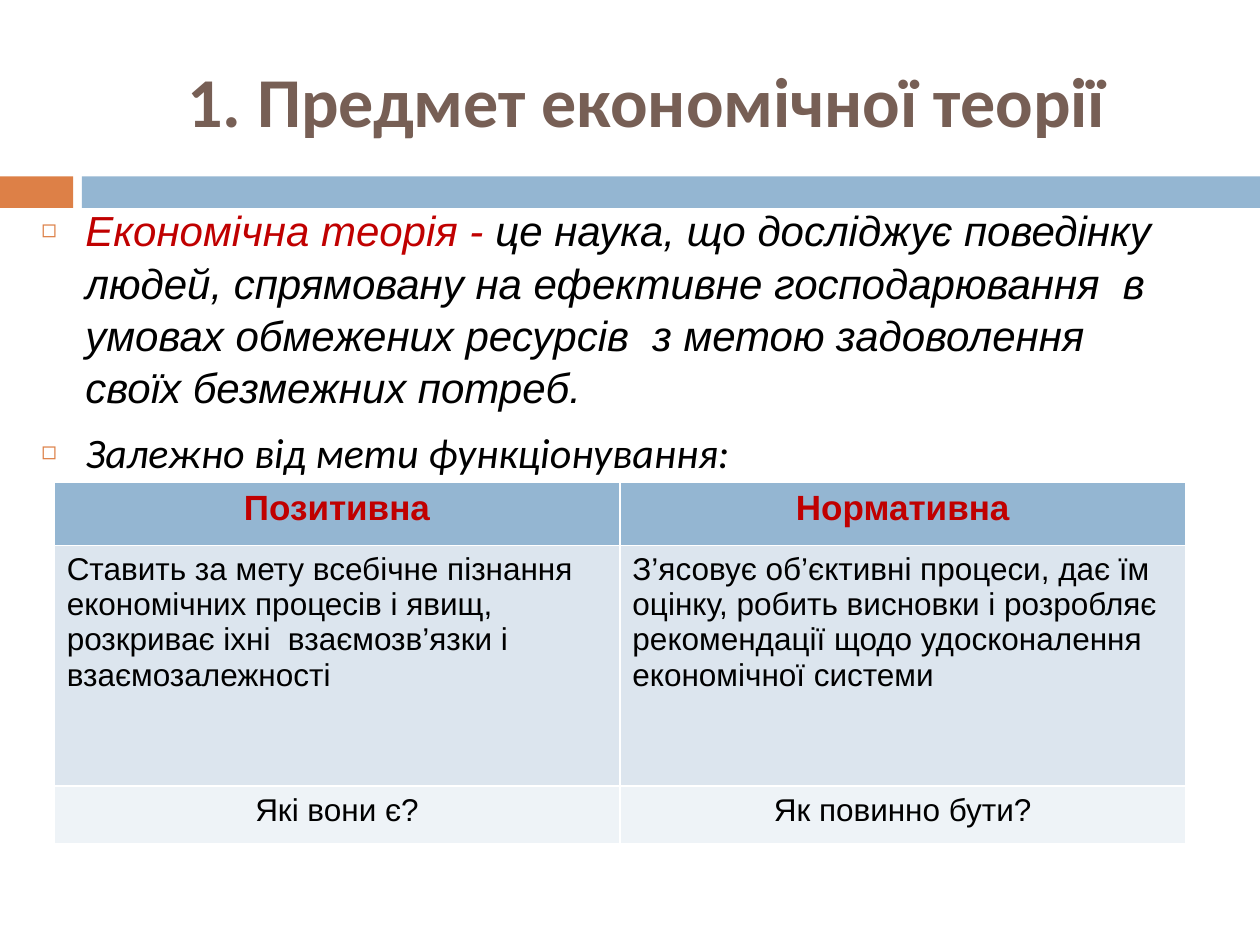
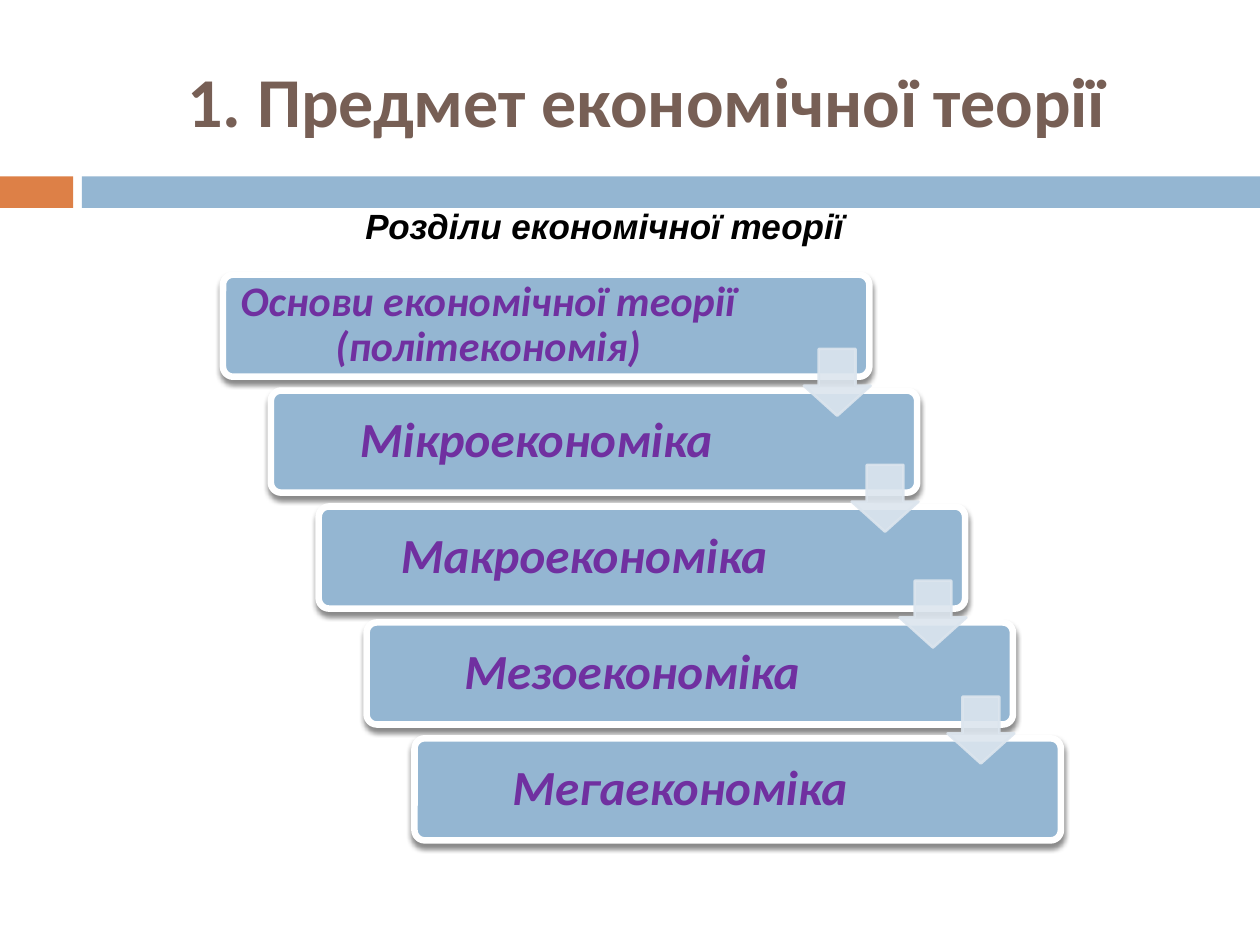
from lxml import etree
from pptx import Presentation
from pptx.dml.color import RGBColor
from pptx.enum.shapes import MSO_SHAPE
from pptx.enum.text import MSO_ANCHOR, MSO_AUTO_SIZE, PP_ALIGN
from pptx.oxml.ns import qn
from pptx.util import Inches, Pt

RECTANGLE = MSO_SHAPE.RECTANGLE
ROUNDED = MSO_SHAPE.ROUNDED_RECTANGLE
DOWN_ARROW = MSO_SHAPE.DOWN_ARROW
LEFT, CENTER = PP_ALIGN.LEFT, PP_ALIGN.CENTER
TOP, MIDDLE = MSO_ANCHOR.TOP, MSO_ANCHOR.MIDDLE
NO_AUTOFIT = MSO_AUTO_SIZE.NONE

COLORS = {
    "orange": "DD8047", "blue": "94B6D2", "pale": "DCE5EE", "paler": "EEF3F7",
    "brown": "775F55", "red": "C00000", "purple": "7030A0",
    "black": "000000", "white": "FFFFFF",
}
TITLE = "1. Предмет економічної теорії"
TITLE_BOX = (0.67, 0.25, 8.92, 1.08)
BODY_BOX = (0.23, 1.56, 9.14, 5.34)
TABLE_BOX = (0.43, 3.83, 8.98, 2.87)
CASCADE_BOX = (1.77, 2.18, 6.65, 4.49)
BANDS = [(0, 0.58, "orange"), (0.65, 9.35, "blue")]

DEFINITION = [
    [("Економічна теорія - ", {"color": "red"}),
     ("це наука, що досліджує поведінку людей, спрямовану на ефективне "
      "господарювання  в умовах обмежених ресурсів  з метою задоволення "
      "своїх безмежних потреб.", {})],
    [("Залежно від мети функціонування:", {"font": "Calibri"})],
]
TABLE_ROWS = [
    (0.5, "blue", CENTER, {"size": 20, "color": "red", "bold": True},
     ("Позитивна", "Нормативна")),
    (1.91, "pale", LEFT, {"size": 18},
     ("Ставить за мету всебічне пізнання економічних процесів і явищ, "
      "розкриває іхні  взаємозв’язки і взаємозалежності",
      "З’ясовує об’єктивні процеси, дає їм оцінку, робить висновки і "
      "розробляє рекомендації щодо удосконалення економічної системи")),
    (0.46, "paler", CENTER, {"size": 18}, ("Які вони є?", "Як повинно бути?")),
]
SECTIONS = [
    ("Основи економічної теорії (політекономія)", 24),
    ("Мікроекономіка", 28),
    ("Макроекономіка", 28),
    ("Мезоекономіка", 28),
    ("Мегаекономіка", 28),
]


def rgb(name):
    """Return the named palette colour."""
    return RGBColor.from_string(COLORS[name])


def inches(box):
    """Convert a box of numbers to lengths."""
    return [Inches(value) for value in box]


def add_span(para, text, size=24, font="Arial", color="black", bold=False, italic=False):
    """Add formatted text to a paragraph."""
    span = para.add_run()
    span.text = text
    span.font.size = Pt(size)
    span.font.name = font
    span.font.color.rgb = rgb(color)
    span.font.bold = bold
    span.font.italic = italic


def add_bullet(para):
    """Give a paragraph a hanging square bullet."""
    properties = para._p.get_or_add_pPr()
    properties.set("marL", str(Inches(0.35)))
    properties.set("indent", str(Inches(-0.35)))
    color = etree.SubElement(properties, qn("a:buClr"))
    etree.SubElement(color, qn("a:srgbClr"), val=COLORS["orange"])
    etree.SubElement(properties, qn("a:buSzPct"), val="60000")
    etree.SubElement(properties, qn("a:buFont"), typeface="Arial")
    etree.SubElement(properties, qn("a:buChar"), char="◻")


def add_figure(page, kind, box, fill, line=None, line_width=1):
    """Add a flat preset shape."""
    figure = page.shapes.add_shape(kind, *inches(box))
    figure.shadow.inherit = False
    figure.fill.solid()
    figure.fill.fore_color.rgb = rgb(fill)
    if line:
        figure.line.color.rgb = rgb(line)
        figure.line.width = Pt(line_width)
    else:
        figure.line.fill.background()
    return figure


def add_soft_shadow(figure):
    """Cast a soft shadow straight down."""
    effects = figure._element.spPr.find(qn("a:effectLst"))
    shadow = etree.SubElement(
        effects, qn("a:outerShdw"), blurRad=str(Pt(3)), dist=str(Pt(2.4)),
        dir="5400000", algn="ctr", rotWithShape="0")
    color = etree.SubElement(shadow, qn("a:srgbClr"), val=COLORS["black"])
    etree.SubElement(color, qn("a:alpha"), val="45000")


def add_page(deck):
    """Add a page with the shared bands and title."""
    page = deck.slides.add_slide(deck.slide_layouts[5])
    for left, width, color in BANDS:
        add_figure(page, RECTANGLE, (left, 1.4, width, 0.25), color)
    title = page.shapes.title
    title.left, title.top, title.width, title.height = inches(TITLE_BOX)
    title.text_frame.vertical_anchor = MIDDLE
    title.text_frame.auto_size = NO_AUTOFIT
    para = title.text_frame.paragraphs[0]
    para.alignment = CENTER
    add_span(para, TITLE, size=40, font="Calibri", color="brown", bold=True)
    return page


def add_body(page, box, paragraphs, alignment=LEFT, bulleted=False, **style):
    """Fill a text box with paragraphs of formatted spans."""
    frame = page.shapes.add_textbox(*inches(box)).text_frame
    frame.word_wrap = True
    for index, spans in enumerate(paragraphs):
        para = frame.add_paragraph() if index else frame.paragraphs[0]
        para.alignment = alignment
        para.space_before = Pt(7)
        para.line_spacing = 1.04
        if bulleted:
            add_bullet(para)
        for text, changes in spans:
            add_span(para, text, **{**style, **changes})


def add_comparison(page, box):
    """Add the table that compares the two kinds of theory."""
    table = page.shapes.add_table(len(TABLE_ROWS), 2, *inches(box)).table
    for row, (height, fill, alignment, style, texts) in enumerate(TABLE_ROWS):
        table.rows[row].height = Inches(height)
        for column, text in enumerate(texts):
            cell = table.cell(row, column)
            cell.fill.solid()
            cell.fill.fore_color.rgb = rgb(fill)
            cell.vertical_anchor = TOP
            para = cell.text_frame.paragraphs[0]
            para.alignment = alignment
            add_span(para, text, **style)


def add_step(page, box, text, size):
    """Add one rounded step, its text kept clear of the arrow."""
    step = add_figure(page, ROUNDED, box, "blue", "white", 3.75)
    step.adjustments[0] = 0.1
    add_soft_shadow(step)
    frame = step.text_frame
    frame.word_wrap = True
    frame.vertical_anchor = MIDDLE
    frame.margin_left, frame.margin_right = Inches(0.07), Inches(0.99)
    para = frame.paragraphs[0]
    para.alignment = CENTER
    para.line_spacing = 0.9
    add_span(para, text, size=size, font="Calibri", color="purple", bold=True, italic=True)


def add_step_arrow(page, box):
    """Add a translucent arrow to the next step."""
    arrow = add_figure(page, DOWN_ARROW, box, "pale", "pale", 1.5)
    arrow.adjustments[0] = 0.55
    arrow.adjustments[1] = 0.45
    for color in arrow._element.spPr.iter(qn("a:srgbClr")):
        etree.SubElement(color, qn("a:alpha"), val="90000")


def add_cascade(page, box):
    """Add the staircase of sections with arrows between them."""
    left, top, width, height = box
    step_width, step_height, arrow_size = 5.13, 0.81, 0.53
    gaps = len(SECTIONS) - 1
    shift = (width - step_width) / gaps
    drop = (height - step_height) / gaps
    corners = [(left + shift * index, top + drop * index) for index in range(len(SECTIONS))]
    for (x, y), (text, size) in zip(corners, SECTIONS):
        add_step(page, (x, y, step_width, step_height), text, size)
    for x, y in corners[:-1]:
        add_step_arrow(page, (x + 4.61, y + 0.59, arrow_size, arrow_size))


def build_definition(deck):
    """Build the page with the definition and the table."""
    page = add_page(deck)
    add_body(page, BODY_BOX, DEFINITION, bulleted=True, italic=True)
    add_comparison(page, TABLE_BOX)


def build_sections(deck):
    """Build the page with the sections of the theory."""
    page = add_page(deck)
    add_body(page, BODY_BOX, [[("Розділи економічної теорії", {})]],
             alignment=CENTER, size=20, bold=True, italic=True)
    add_cascade(page, CASCADE_BOX)


def main():
    """Build and save the deck."""
    deck = Presentation()
    deck.slide_width, deck.slide_height = Inches(10), Inches(7.5)
    build_definition(deck)
    build_sections(deck)
    deck.save("out.pptx")


if __name__ == "__main__":
    main()
